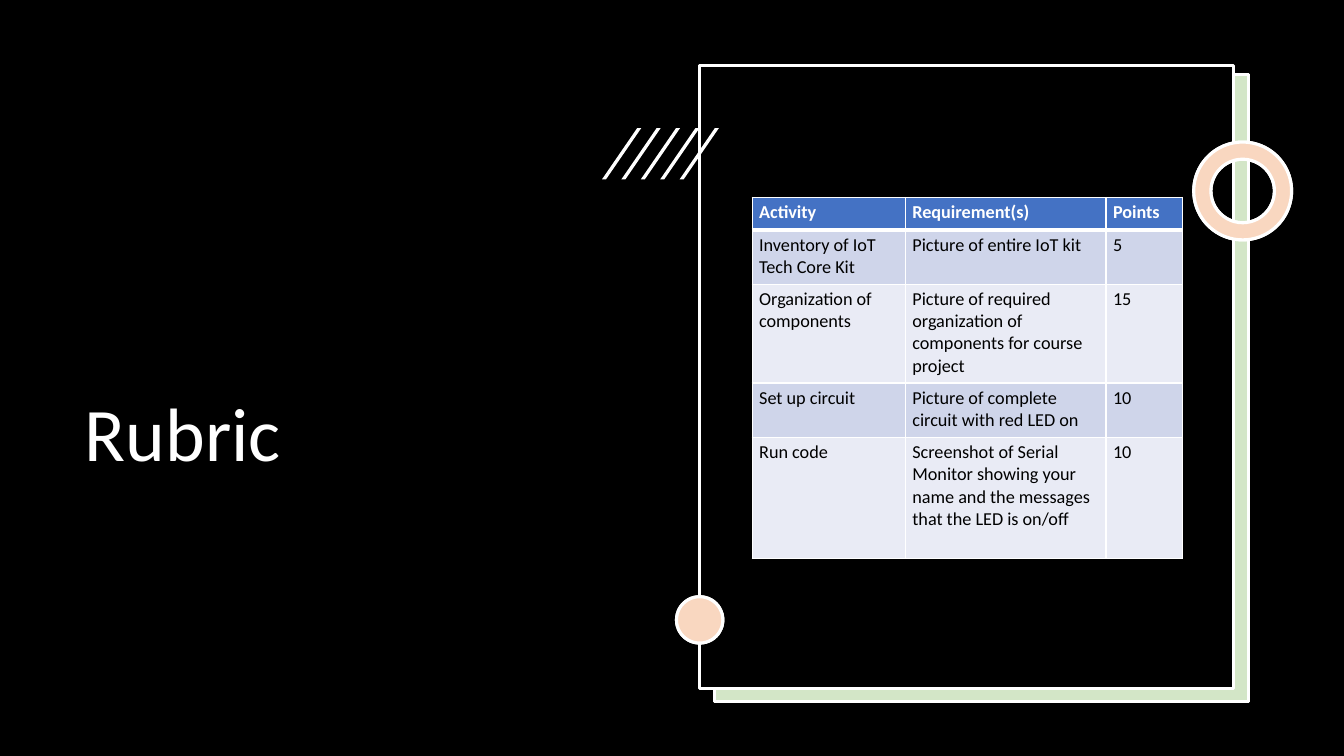
from lxml.etree import SubElement
from pptx import Presentation
from pptx.dml.color import RGBColor
from pptx.enum.shapes import MSO_SHAPE
from pptx.enum.text import MSO_ANCHOR, MSO_AUTO_SIZE, PP_ALIGN
from pptx.oxml.ns import qn
from pptx.util import Inches, Pt

BLACK = RGBColor(0x00, 0x00, 0x00)
WHITE = RGBColor(0xFF, 0xFF, 0xFF)
GREEN = RGBColor(0x70, 0xAD, 0x47)
ORANGE = RGBColor(0xED, 0x7D, 0x31)
BLUE = RGBColor(0x44, 0x72, 0xC4)
BANDS = RGBColor(0xE9, 0xEB, 0xF5), RGBColor(0xCF, 0xD5, 0xEA)

WIDTHS = 1.52, 1.99, 0.76
HEIGHTS = 0.32, 0.54, 0.98, 0.54, 1.2
ROWS = [
    ("Activity", "Requirement(s)", "Points"),
    ("Inventory of IoT Tech Core Kit", "Picture of entire IoT kit", "5"),
    ("Organization of components",
     "Picture of required organization of components for course project", "15"),
    ("Set up circuit", "Picture of complete circuit with red LED on", "10"),
    ("Run code",
     "Screenshot of Serial Monitor showing your name and the messages "
     "that the LED is on/off", "10"),
]


class Deck:
    font = "Calibri"
    edge = Pt(2.25)

    def __init__(self):
        self.show = Presentation()
        self.show.slide_width = Inches(13.33)
        self.show.slide_height = Inches(7.5)
        self.slide = self.show.slides.add_slide(self.show.slide_layouts[5])
        self.shapes = self.slide.shapes

    def style(self, para, size, color, bold=False):
        font = para.font
        font.name, font.size, font.bold = self.font, Pt(size), bold
        font.color.rgb = color

    def title(self, text, *box):
        head = self.shapes.title
        head.left, head.top, head.width, head.height = map(Inches, box)
        frame = head.text_frame
        frame.text = text
        frame.auto_size = MSO_AUTO_SIZE.NONE
        frame.word_wrap = True
        frame.vertical_anchor = MSO_ANCHOR.BOTTOM
        para = frame.paragraphs[0]
        para.alignment = PP_ALIGN.LEFT
        para.line_spacing = 0.9
        self.style(para, 54, WHITE)
        # Lift the title above the backdrop
        self.shapes.element.append(head.element)

    def shape(self, kind, box, fill, line=None, alpha=None):
        item = self.shapes.add_shape(kind, *map(Inches, box))
        self.paint(item, fill)
        if line is not None:
            item.line.color.rgb = line
            item.line.width = self.edge
        if alpha:
            tone = item.fill._xPr.find(qn("a:solidFill"))[0]
            SubElement(tone, qn("a:alpha"), val=str(alpha * 1000))
        return item

    def paint(self, item, fill):
        item.shadow.inherit = False
        item.fill.solid()
        item.fill.fore_color.rgb = fill
        item.line.fill.background()

    def tint(self, kind, box, color):
        """Lay a sheer colour over a white shape of the same outline."""
        return [self.shape(kind, box, WHITE, WHITE),
                self.shape(kind, box, color, WHITE, 30)]

    def slash(self, left, top):
        pts = [(left + x, top + y)
               for x, y in ((0.04, 0.51), (0, 0.51), (0.35, 0), (0.39, 0))]
        pts = [(Inches(x), Inches(y)) for x, y in pts]
        pen = self.shapes.build_freeform(*pts[0])
        pen.add_line_segments(pts[1:])
        item = pen.convert_to_shape()
        self.paint(item, WHITE)
        return item

    def group(self, items):
        self.shapes.add_group_shape(items)

    def table(self, left, top):
        box = map(Inches, (left, top, sum(WIDTHS), sum(HEIGHTS)))
        grid = self.shapes.add_table(len(ROWS), len(WIDTHS), *box).table
        for col, width in zip(grid.columns, WIDTHS):
            col.width = Inches(width)
        for r, (texts, height) in enumerate(zip(ROWS, HEIGHTS)):
            grid.rows[r].height = Inches(height)
            for c, text in enumerate(texts):
                self.cell(grid.cell(r, c), text, r)

    def cell(self, cell, text, row):
        head = row == 0
        cell.text = text
        cell.margin_left = cell.margin_right = Inches(0.07)
        cell.margin_top = cell.margin_bottom = Inches(0.04)
        self.style(cell.text_frame.paragraphs[0], 13,
                   WHITE if head else BLACK, head)
        for side in "LRTB":
            thick = (head and side == "B") or (row == 1 and side == "T")
            line = SubElement(cell._tc.get_or_add_tcPr(), qn("a:ln" + side),
                              w=str(Pt(3 if thick else 1)))
            tone = SubElement(line, qn("a:solidFill"))
            SubElement(tone, qn("a:srgbClr"), val=str(WHITE))
        cell.fill.solid()
        cell.fill.fore_color.rgb = BLUE if head else BANDS[row % 2]


def main():
    deck = Deck()
    deck.shape(MSO_SHAPE.RECTANGLE, (0, 0, 13.33, 7.5), BLACK)
    deck.title("Rubric", 0.74, 0.89, 5.35, 3.9)
    deck.group(deck.tint(MSO_SHAPE.RECTANGLE, (7.09, 0.74, 5.29, 6.22), GREEN))
    deck.shape(MSO_SHAPE.RECTANGLE, (6.94, 0.65, 5.29, 6.18), BLACK, WHITE)
    deck.group([deck.slash(5.97 + 0.1925 * i, 1.27) for i in range(5)])
    for ring in deck.tint(MSO_SHAPE.DONUT, (11.84, 1.41, 0.97, 0.97), ORANGE):
        ring.adjustments[0] = 0.175
    deck.tint(MSO_SHAPE.OVAL, (6.71, 5.92, 0.46, 0.46), ORANGE)
    deck.table(7.46, 1.96)
    deck.show.save("out.pptx")


if __name__ == "__main__":
    main()
